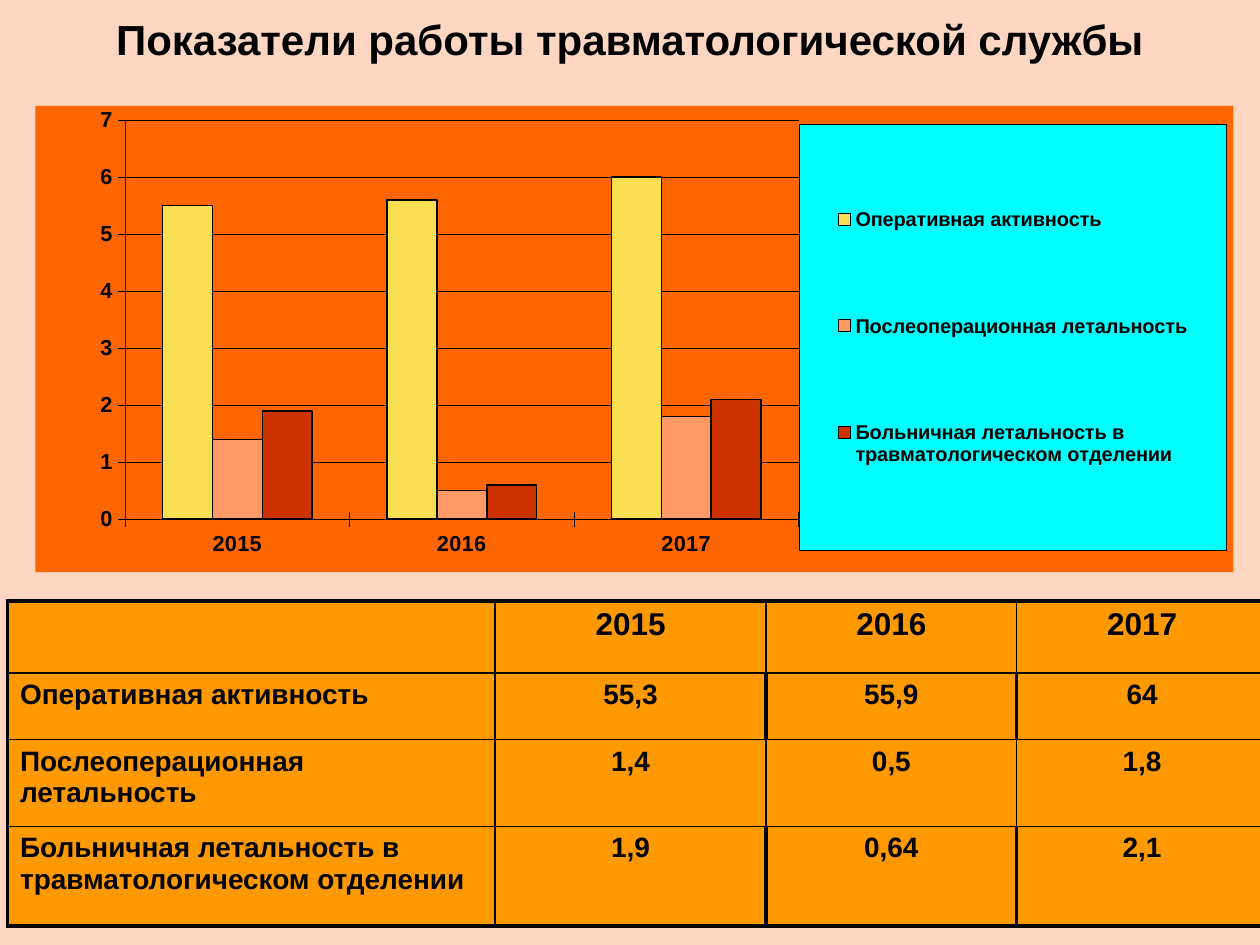
from lxml.etree import SubElement
from pptx import Presentation
from pptx.chart.data import CategoryChartData as ChartData
from pptx.dml.color import RGBColor
from pptx.enum.chart import XL_CHART_TYPE as ChartType
from pptx.enum.chart import XL_LEGEND_POSITION as LegendPos
from pptx.enum.chart import XL_TICK_LABEL_POSITION as LabelPos
from pptx.enum.chart import XL_TICK_MARK as Tick
from pptx.enum.text import MSO_ANCHOR as Anchor
from pptx.enum.text import PP_ALIGN as Align
from pptx.oxml import parse_xml
from pptx.oxml.ns import nsdecls, qn
from pptx.util import Pt

BLACK = RGBColor(0x00, 0x00, 0x00)
PEACH = RGBColor(0xFF, 0xD6, 0xC2)
ORANGE = RGBColor(0xFF, 0x66, 0x00)
AMBER = RGBColor(0xFF, 0x99, 0x00)
CYAN = RGBColor(0x00, 0xFF, 0xFF)
YELLOW = RGBColor(0xFB, 0xDF, 0x53)
SALMON = RGBColor(0xFF, 0x99, 0x66)
RED = RGBColor(0xCC, 0x33, 0x00)

THIN, THICK = 1, 2.25
YEARS = ["2015", "2016", "2017"]
RATES = [
    ("Оперативная активность", YELLOW, (5.5, 5.6, 6), ("55,3", "55,9", "64")),
    ("Послеоперационная летальность", SALMON, (1.4, 0.5, 1.8), ("1,4", "0,5", "1,8")),
    ("Больничная летальность в травматологическом отделении", RED,
     (1.9, 0.6, 2.1), ("1,9", "0,64", "2,1")),
]


def set_font(font, size):
    font.name = "Arial"
    font.size = Pt(size)
    font.bold = True
    font.color.rgb = BLACK


def set_fill(fill, color):
    fill.solid()
    fill.fore_color.rgb = color


def set_line(line, width):
    line.color.rgb = BLACK
    line.width = Pt(width)


def add_title(slide, text):
    title = slide.shapes.title
    title.left, title.top, title.width, title.height = Pt(36), Pt(0), Pt(648), Pt(44.64)
    frame = title.text_frame
    frame.text = text
    frame.vertical_anchor = Anchor.MIDDLE
    para = frame.paragraphs[0]
    para.alignment = Align.CENTER
    set_font(para.runs[0].font, 24)


def make_layout(x, y, w, h, inner=False):
    """Return a manual layout, in fractions of the chart's size."""
    parts = [("layoutTarget", "inner")] if inner else []
    parts += [("xMode", "edge"), ("yMode", "edge"), ("x", x), ("y", y), ("w", w), ("h", h)]
    body = "".join(f'<c:{tag} val="{val}"/>' for tag, val in parts)
    return parse_xml(f'<c:layout {nsdecls("c")}><c:manualLayout>{body}'
                     "</c:manualLayout></c:layout>")


def shape_props(color, width=None):
    """Return chart shape properties: a fill, and a black line or none."""
    line = (f'<a:ln w="{Pt(width)}"><a:solidFill><a:srgbClr val="{BLACK}"/></a:solidFill></a:ln>'
            if width else "<a:ln><a:noFill/></a:ln>")
    return parse_xml(f'<c:spPr {nsdecls("c", "a")}><a:solidFill><a:srgbClr val="{color}"/>'
                     f"</a:solidFill>{line}</c:spPr>")


def style_axis(axis):
    axis.major_tick_mark = Tick.CROSS
    axis.minor_tick_mark = Tick.NONE
    set_font(axis.tick_labels.font, 12.4)
    set_line(axis.format.line, 0.22)


def add_legend(chart):
    chart.has_legend = True
    legend = chart.legend
    legend.position = LegendPos.RIGHT
    legend.include_in_layout = False
    set_font(legend.font, 11.4)
    node = legend.font._element if hasattr(legend.font, "_element") else None
    node = chart._chartSpace.chart.find(qn("c:legend"))
    for old in node.findall(qn("c:layout")):
        node.remove(old)
    node.find(qn("c:legendPos")).addnext(make_layout(0.638, 0.039, 0.356, 0.914))
    node.find(qn("c:txPr")).addprevious(shape_props(CYAN, 0.22))


def add_chart(slide):
    data = ChartData()
    data.categories = YEARS
    for name, _, vals, _ in RATES:
        data.add_series(name, vals)
    chart = slide.shapes.add_chart(ChartType.COLUMN_CLUSTERED, Pt(20.16), Pt(60.48),
                                   Pt(684.72), Pt(266.4), data).chart
    chart.has_title = False
    set_font(chart.font, 12.4)
    plot = chart.plots[0]
    plot.gap_width, plot.overlap = 150, 0
    plot.vary_by_categories = False
    for bar, (_, color, _, _) in zip(plot.series, RATES):
        set_fill(bar.format.fill, color)
        set_line(bar.format.line, 0.89)

    style_axis(chart.category_axis)
    chart.category_axis.tick_label_position = LabelPos.LOW
    scale = chart.value_axis
    style_axis(scale)
    scale.minimum_scale, scale.maximum_scale, scale.major_unit = 0, 7, 1
    scale.has_major_gridlines = True
    set_line(scale.major_gridlines.format.line, 0.22)

    add_legend(chart)
    root = chart._chartSpace
    area = root.chart.plotArea
    for old in area.findall(qn("c:layout")):
        area.remove(old)
    area.insert(0, make_layout(0.075, 0.031, 0.562, 0.856, inner=True))
    root.chart.addnext(shape_props(ORANGE))


def set_edges(cell, widths):
    """Draw black left, right, top and bottom edges."""
    props = cell._tc.get_or_add_tcPr()
    for spot, (side, width) in enumerate(zip("LRTB", widths)):
        edge = props.makeelement(qn(f"a:ln{side}"), {"w": str(Pt(width))})
        fill = SubElement(edge, qn("a:solidFill"))
        SubElement(fill, qn("a:srgbClr"), val=str(BLACK))
        props.insert(spot, edge)


def edge_widths(row, col):
    """Thick outside; inner uprights are thick in the first and last data rows."""
    def upright(line):
        return THICK if line in (0, 4) or (line > 1 and row in (1, 3)) else THIN

    return (upright(col), upright(col + 1),
            THICK if row == 0 else THIN, THICK if row == 3 else THIN)


def fill_cell(cell, text, size, align):
    set_fill(cell.fill, AMBER)
    cell.text_frame.text = text
    para = cell.text_frame.paragraphs[0]
    para.alignment = align
    for run in para.runs:
        set_font(run.font, size)


def add_table(slide):
    rows = [["", *YEARS]] + [[name, *shown] for name, _, _, shown in RATES]
    wide = [278.64, 154.8, 143.28, 143.28]
    high = [41.04, 38.16, 49.68, 56.88]
    table = slide.shapes.add_table(len(rows), len(wide), Pt(4.32), Pt(343.44),
                                   Pt(sum(wide)), Pt(sum(high))).table
    table.first_row = table.horz_banding = False
    for col, width in zip(table.columns, wide):
        col.width = Pt(width)
    for r, texts in enumerate(rows):
        table.rows[r].height = Pt(high[r])
        for c, text in enumerate(texts):
            cell = table.cell(r, c)
            fill_cell(cell, text, 16 if r else 18, Align.CENTER if c else Align.LEFT)
            set_edges(cell, edge_widths(r, c))


def main():
    deck = Presentation()
    deck.slide_width, deck.slide_height = Pt(720), Pt(540)
    slide = deck.slides.add_slide(deck.slide_layouts[5])
    set_fill(slide.background.fill, PEACH)
    add_title(slide, "Показатели работы травматологической службы")
    add_chart(slide)
    add_table(slide)
    deck.save("out.pptx")


if __name__ == "__main__":
    main()
